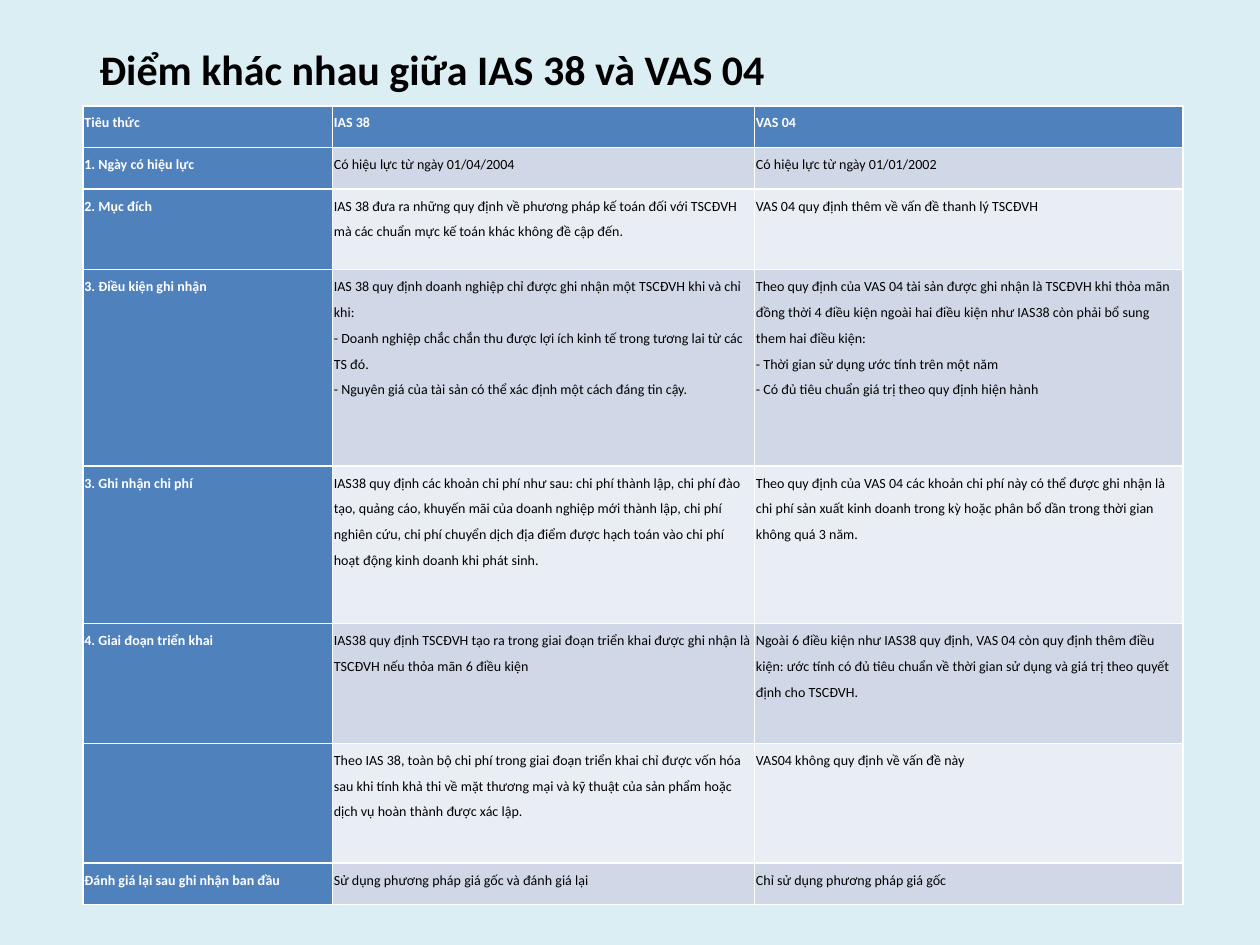
from pptx import Presentation
from pptx.dml.color import RGBColor
from pptx.enum.text import MSO_ANCHOR
from pptx.util import Inches, Pt

MIDDLE = MSO_ANCHOR.MIDDLE
SKY = RGBColor(0xDB, 0xEE, 0xF4)
BLUE = RGBColor(0x4F, 0x81, 0xBD)
BANDS = (RGBColor(0xE9, 0xED, 0xF4), RGBColor(0xD0, 0xD8, 0xE8))
WHITE = RGBColor(0xFF, 0xFF, 0xFF)
BLACK = RGBColor(0, 0, 0)

TITLE = "Điểm khác nhau giữa IAS 38 và VAS 04"
COLS = (1.98, 3.35, 3.4)
ROWS = (
    (0.33, "Tiêu thức", "IAS 38", "VAS 04"),
    (0.33, "1. Ngày có hiệu lực",
     "Có hiệu lực từ ngày 01/04/2004",
     "Có hiệu lực từ ngày 01/01/2002"),
    (0.64, "2. Mục đích",
     "IAS 38 đưa ra những quy định về phương pháp kế toán đối với TSCĐVH "
     "mà các chuẩn mực kế toán khác không đề cập đến.",
     "VAS 04 quy định thêm về vấn đề thanh lý TSCĐVH"),
    (1.56, "3. Điều kiện ghi nhận",
     "IAS 38 quy định doanh nghiệp chỉ được ghi nhận một TSCĐVH khi và chỉ khi:\n"
     "- Doanh nghiệp chắc chắn thu được lợi ích kinh tế trong tương lai từ các TS đó.\n"
     "- Nguyên giá của tài sản có thể xác định một cách đáng tin cậy.",
     "Theo quy định của VAS 04 tài sản được ghi nhận là TSCĐVH khi thỏa mãn "
     "đồng thời 4 điều kiện ngoài hai điều kiện như IAS38 còn phải bổ sung "
     "them hai điều kiện:\n"
     "- Thời gian sử dụng ước tính trên một năm\n"
     "- Có đủ tiêu chuẩn giá trị theo quy định hiện hành"),
    (1.25, "3. Ghi nhận chi phí",
     "IAS38 quy định các khoản chi phí như sau: chi phí thành lập, chi phí đào "
     "tạo, quảng cáo, khuyến mãi của doanh nghiệp mới thành lập, chi phí "
     "nghiên cứu, chi phí chuyển dịch địa điểm được hạch toán vào chi phí "
     "hoạt động kinh doanh khi phát sinh.",
     "Theo quy định của VAS 04 các khoản chi phí này có thể được ghi nhận là "
     "chi phí sản xuất kinh doanh trong kỳ hoặc phân bổ dần trong thời gian "
     "không quá 3 năm."),
    (0.95, "4. Giai đoạn triển khai",
     "IAS38 quy định TSCĐVH tạo ra trong giai đoạn triển khai được ghi nhận là "
     "TSCĐVH nếu thỏa mãn 6 điều kiện",
     "Ngoài 6 điều kiện như IAS38 quy định, VAS 04 còn quy định thêm điều "
     "kiện: ước tính có đủ tiêu chuẩn về thời gian sử dụng và giá trị theo quyết "
     "định cho TSCĐVH."),
    (0.95, "",
     "Theo IAS 38, toàn bộ chi phí trong giai đoạn triển khai chỉ được vốn hóa "
     "sau khi tính khả thi về mặt thương mại và kỹ thuật của sản phẩm hoặc "
     "dịch vụ hoàn thành được xác lập.",
     "VAS04 không quy định về vấn đề này"),
    (0.33, "Đánh giá lại sau ghi nhận ban đầu",
     "Sử dụng phương pháp giá gốc và đánh giá lại",
     "Chỉ sử dụng phương pháp giá gốc"),
)


def apply(item, values):
    for name, value in values.items():
        setattr(item, name, value)


class Deck:
    font = "Calibri"
    frame = {"word_wrap": True, "vertical_anchor": MIDDLE,
             "margin_bottom": Inches(0.42)}
    inset = {"margin_left": Inches(0.01), "margin_right": Inches(0.01),
             "margin_top": 0, "margin_bottom": 0}

    def __init__(self, show):
        self.slide = show.slides.add_slide(show.slide_layouts[6])
        fill = self.slide.background.fill
        fill.solid()
        fill.fore_color.rgb = SKY

    def label(self, frame, text, size, color, bold, space):
        frame.text = text
        for para in frame.paragraphs:
            para.line_spacing = space
            apply(para.font, {"size": Pt(size)})
            for run in para.runs:
                apply(run.font, {"name": self.font, "size": Pt(size), "bold": bold})
                run.font.color.rgb = color

    def title(self, text, left, top, width, height):
        box = self.slide.shapes.add_textbox(
            Inches(left), Inches(top), Inches(width), Inches(height))
        apply(box.text_frame, self.frame)
        self.label(box.text_frame, text, 24, BLACK, True, 0.9)

    def table(self, rows, cols, left, top):
        high = sum(row[0] for row in rows)
        table = self.slide.shapes.add_table(
            len(rows), len(cols), Inches(left), Inches(top),
            Inches(sum(cols)), Inches(high)).table
        table.first_col = True
        for col, width in zip(table.columns, cols):
            col.width = Inches(width)
        for r, (height, *texts) in enumerate(rows):
            table.rows[r].height = Inches(height)
            for c, text in enumerate(texts):
                self.cell(table.cell(r, c), text, r == 0 or c == 0, BANDS[r % 2])

    def cell(self, cell, text, head, band):
        apply(cell, self.inset)
        cell.fill.solid()
        cell.fill.fore_color.rgb = BLUE if head else band
        self.label(cell.text_frame, text, 8, WHITE if head else BLACK, head, 1.5)


def main():
    show = Presentation()
    apply(show, {"slide_width": Inches(10), "slide_height": Inches(7.5)})
    deck = Deck(show)
    deck.title(TITLE, 0.69, 0.03, 8.62, 1.45)
    deck.table(ROWS, COLS, 0.66, 0.84)
    show.save("out.pptx")


if __name__ == "__main__":
    main()
